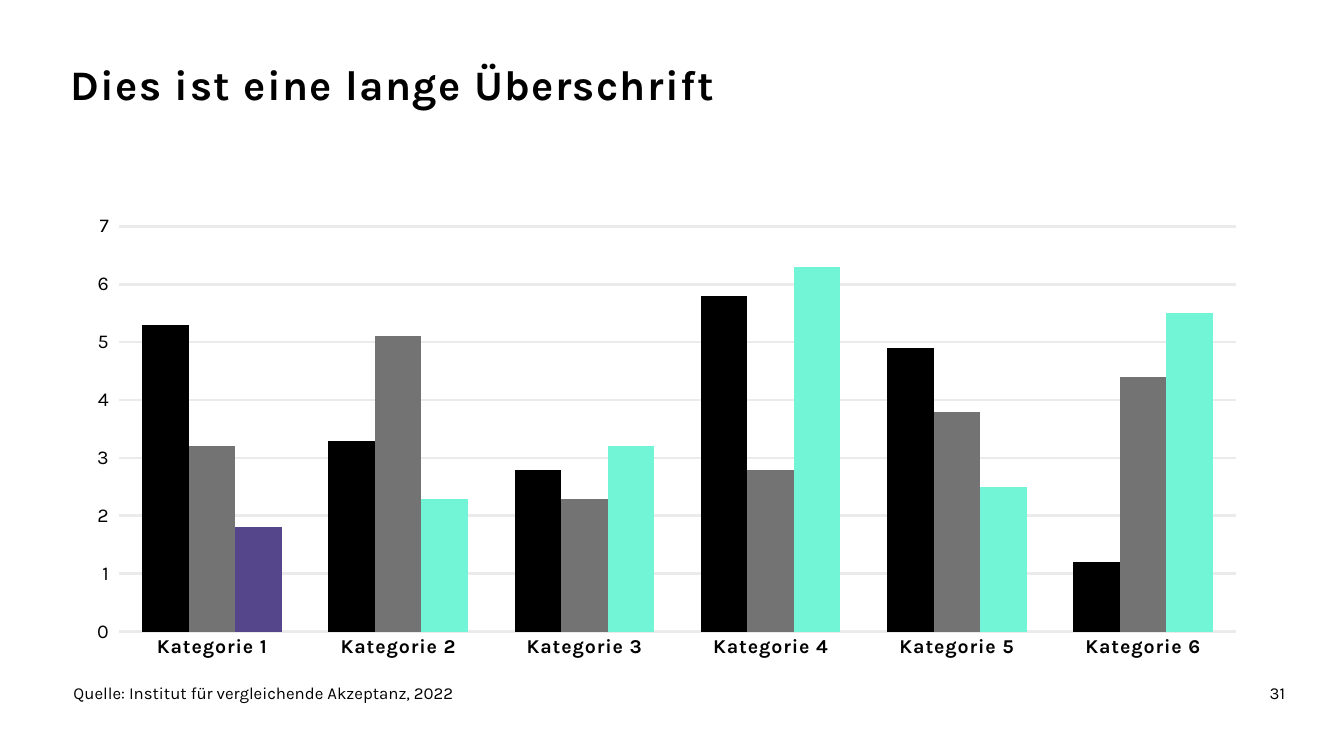
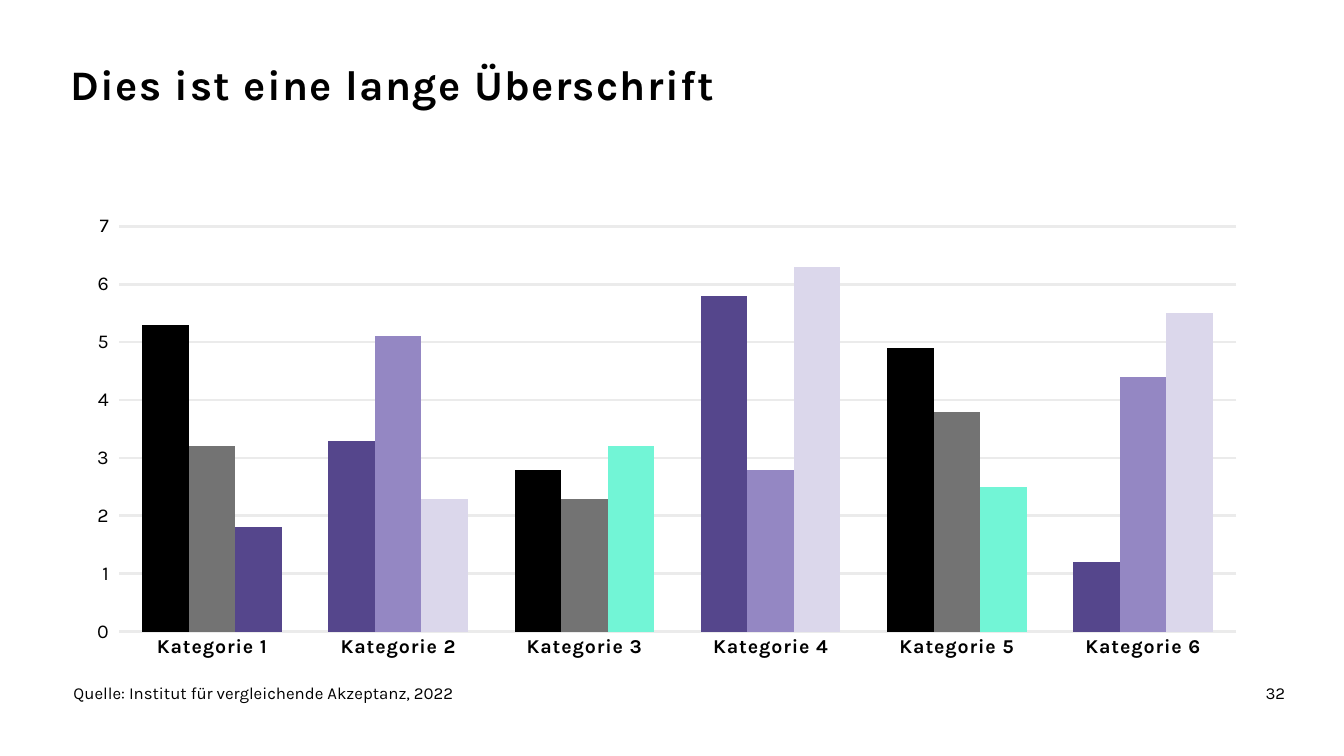
"""Build two slides with clustered column charts in different highlight colours."""
from lxml import etree
from pptx import Presentation
from pptx.chart.data import CategoryChartData
from pptx.dml.color import RGBColor
from pptx.enum.chart import XL_CHART_TYPE, XL_TICK_MARK
from pptx.enum.text import PP_ALIGN
from pptx.oxml.ns import qn
from pptx.util import Pt

COLUMNS = XL_CHART_TYPE.COLUMN_CLUSTERED
TICK_NONE, TICK_OUTSIDE = XL_TICK_MARK.NONE, XL_TICK_MARK.OUTSIDE
LEFT, RIGHT = PP_ALIGN.LEFT, PP_ALIGN.RIGHT

BLACK = RGBColor(0x00, 0x00, 0x00)
GREY = RGBColor(0x73, 0x73, 0x73)
MINT = RGBColor(0x72, 0xF5, 0xD6)
PURPLE = RGBColor(0x55, 0x46, 0x8C)
LILAC = RGBColor(0x94, 0x87, 0xC3)
PALE_LILAC = RGBColor(0xDB, 0xD7, 0xEB)
GRID = RGBColor(0xEB, 0xEB, 0xEB)

FONT = "Karla"
TITLE = "Dies ist eine lange Überschrift"
SOURCE = "Quelle: Institut für vergleichende Akzeptanz, 2022"
CATEGORIES = [f"Kategorie {number}" for number in range(1, 7)]
SERIES = [
    ("Series 1", BLACK, (5.3, 3.3, 2.8, 5.8, 4.9, 1.2)),
    ("Series 2", GREY, (3.2, 5.1, 2.3, 2.8, 3.8, 4.4)),
    ("Series 3", MINT, (1.8, 2.3, 3.2, 6.3, 2.5, 5.5)),
]
PLOT_AREA = {"x": 0.04, "y": 0.05, "w": 0.94, "h": 0.87}

FIRST_COLUMN = {(2, 0): PURPLE}
EVEN_CATEGORIES = {
    (row, category): colour
    for row, colour in enumerate((PURPLE, LILAC, PALE_LILAC))
    for category in (1, 3, 5)
}
SLIDES = [(31, FIRST_COLUMN), (32, FIRST_COLUMN | EVEN_CATEGORIES)]


def style_font(font, size, bold=False, spacing=0):
    """Set typeface, size, weight and letter spacing in points."""
    font.name, font.size, font.bold = FONT, Pt(size), bold
    font.color.rgb = BLACK
    if spacing:
        font._element.set("spc", str(int(spacing * 100)))


def add_text(slide, text, box, size, align=LEFT, bold=False, spacing=0, leading=1.0):
    """Add a text box without margins and return nothing."""
    frame = slide.shapes.add_textbox(*map(Pt, box)).text_frame
    frame.word_wrap = True
    frame.margin_left = frame.margin_right = frame.margin_top = frame.margin_bottom = 0
    paragraph = frame.paragraphs[0]
    paragraph.text = text
    paragraph.alignment = align
    paragraph.line_spacing = leading
    style_font(paragraph.font, size, bold, spacing)


def fix_plot_area(chart):
    """Pin the inner plot area to fixed fractions of the chart."""
    plot_area = chart._chartSpace.chart.plotArea
    for automatic in plot_area.findall(qn("c:layout")):
        plot_area.remove(automatic)
    layout = etree.Element(qn("c:layout"))
    manual = etree.SubElement(layout, qn("c:manualLayout"))
    settings = {"layoutTarget": "inner", "xMode": "edge", "yMode": "edge", **PLOT_AREA}
    for tag, value in settings.items():
        etree.SubElement(manual, qn(f"c:{tag}")).set("val", str(value))
    plot_area.insert(0, layout)


def style_axes(chart):
    """Format both axes and the horizontal grid lines."""
    categories, values = chart.category_axis, chart.value_axis
    for axis, tick in ((categories, TICK_NONE), (values, TICK_OUTSIDE)):
        axis.major_tick_mark, axis.minor_tick_mark = tick, TICK_NONE
        axis.format.line.fill.background()
    style_font(categories.tick_labels.font, 14, bold=True, spacing=0.5)
    style_font(values.tick_labels.font, 14)
    values.minimum_scale, values.maximum_scale, values.major_unit = 0, 7, 1
    values.has_major_gridlines = True
    grid = values.major_gridlines.format.line
    grid.width = Pt(2)
    grid.color.rgb = GRID


def paint(target, colour):
    """Fill a series or a point with one colour."""
    target.format.fill.solid()
    target.format.fill.fore_color.rgb = colour


def add_columns(slide, highlights):
    """Add the column chart with highlights keyed by series and category."""
    data = CategoryChartData()
    data.categories = CATEGORIES
    for name, _, values in SERIES:
        data.add_series(name, values)
    box = map(Pt, (51, 145, 849, 333))
    chart = slide.shapes.add_chart(COLUMNS, *box, data).chart
    chart.has_legend = chart.has_title = False
    style_font(chart.font, 10)
    plot = chart.plots[0]
    plot.gap_width, plot.overlap = 100, 0
    plot.vary_by_categories = False
    for series, (_, colour, _) in zip(plot.series, SERIES):
        series.invert_if_negative = False
        paint(series, colour)
    for (row, category), colour in highlights.items():
        paint(plot.series[row].points[category], colour)
    style_axes(chart)
    fix_plot_area(chart)


def add_frame(slide, number):
    """Add the title, the source line and the page number."""
    add_text(slide, str(number), (763, 487.5, 155, 29), 12, align=RIGHT)
    add_text(slide, SOURCE, (52.5, 487.5, 588, 29), 12)
    add_text(slide, TITLE, (50.5, 47.5, 590, 81), 30, bold=True, spacing=1, leading=0.85)


def main():
    """Create and save the presentation."""
    deck = Presentation()
    deck.slide_width, deck.slide_height = Pt(960), Pt(540)
    for number, highlights in SLIDES:
        slide = deck.slides.add_slide(deck.slide_layouts[6])
        add_frame(slide, number)
        add_columns(slide, highlights)
    deck.save("out.pptx")


if __name__ == "__main__":
    main()
